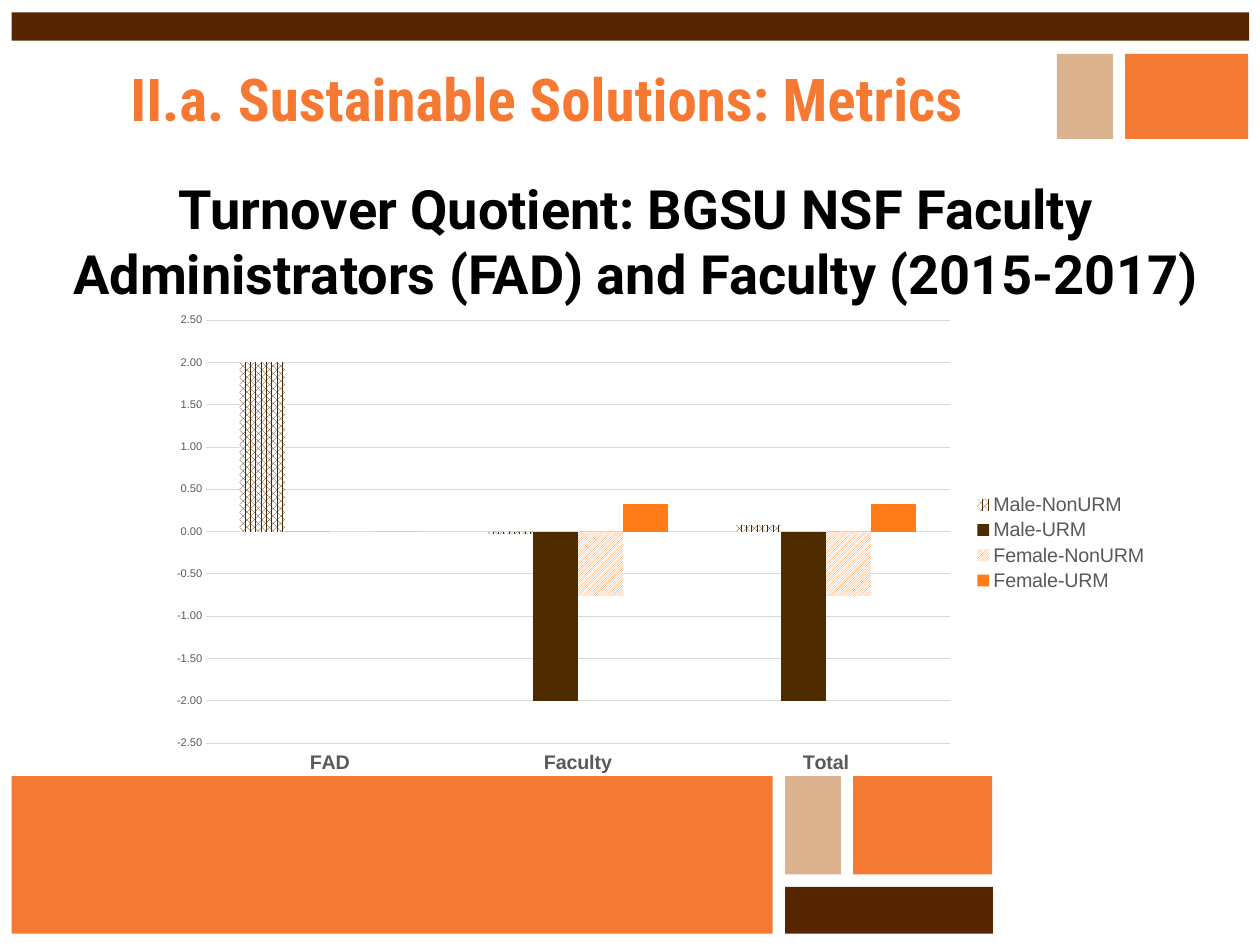
from dataclasses import dataclass

from lxml import etree
from pptx import Presentation
from pptx.chart.data import CategoryChartData
from pptx.dml.color import RGBColor
from pptx.enum.chart import XL_CHART_TYPE, XL_LEGEND_POSITION, XL_TICK_LABEL_POSITION, XL_TICK_MARK
from pptx.enum.dml import MSO_PATTERN
from pptx.enum.shapes import MSO_SHAPE
from pptx.enum.text import MSO_ANCHOR, PP_ALIGN
from pptx.util import Pt

RECTANGLE = MSO_SHAPE.RECTANGLE
COLUMNS = XL_CHART_TYPE.COLUMN_CLUSTERED
LEGEND_RIGHT = XL_LEGEND_POSITION.RIGHT
LABELS_LOW = XL_TICK_LABEL_POSITION.LOW
NO_TICKS = XL_TICK_MARK.NONE
DOTTED = MSO_PATTERN.PERCENT_60
HATCHED = MSO_PATTERN.LIGHT_UPWARD_DIAGONAL
TOP, MIDDLE = MSO_ANCHOR.TOP, MSO_ANCHOR.MIDDLE
CENTER = PP_ALIGN.CENTER


@dataclass(frozen=True)
class Theme:
    brown: str = "572600"
    tan: str = "DBB38E"
    orange: str = "F47932"
    title: str = "F57932"
    black: str = "000000"
    white: str = "FFFFFF"
    label: str = "595959"
    grid: str = "D9D9D9"
    male: str = "4F2C00"
    female: str = "FF7C19"
    title_font: str = "Roboto Condensed"
    heading_font: str = "Roboto"
    chart_font: str = "Arial"
    title_size: int = 48
    heading_size: int = 44
    label_size: int = 16
    chart_size: int = 10
    value_size: int = 9


THEME = Theme()

# Left, top, width, height in points, then colour
BLOCKS = [
    (638, 720.7, 169, 38, THEME.brown),
    (638, 630.7, 45.4, 80, THEME.tan),
    (693.4, 630.7, 113, 80, THEME.orange),
    (9.4, 10, 1005.8, 23, THEME.brown),
    (914.4, 43.9, 100, 69, THEME.orange),
    (859, 43.9, 45.4, 69, THEME.tan),
    (9.4, 630.7, 618.5, 128, THEME.orange),
]

CATEGORIES = ["FAD", "Faculty", "Total"]
# Name, values, colour, pattern
SERIES = [
    ("Male-NonURM", (2, -0.03, 0.08), THEME.male, DOTTED),
    ("Male-URM", (0, -2, -2), THEME.male, None),
    ("Female-NonURM", (0, -0.76, -0.76), THEME.female, HATCHED),
    ("Female-URM", (0, 0.33, 0.33), THEME.female, None),
]
# Plot area as fractions of the chart frame
PLOT_LAYOUT = {"x": 0.048, "y": 0.034, "w": 0.744, "h": 0.886}


def rgb(value):
    return RGBColor.from_string(value)


def apply_format(target, values):
    for name, value in values.items():
        setattr(target, name, value)


def set_font(font, name, size, color, bold=False):
    apply_format(font, {"name": name, "size": Pt(size), "bold": bold})
    font.color.rgb = rgb(color)


def set_line(line, color):
    line.width = Pt(0.75)
    line.color.rgb = rgb(color)


def add_block(page, left, top, width, height, color):
    block = page.shapes.add_shape(RECTANGLE, Pt(left), Pt(top), Pt(width), Pt(height))
    block.shadow.inherit = False
    block.fill.solid()
    block.fill.fore_color.rgb = rgb(color)
    block.line.fill.background()


def add_heading(page, place, text, anchor, *font):
    box = page.shapes.add_textbox(*map(Pt, place))
    frame = box.text_frame
    apply_format(frame, {"word_wrap": True, "vertical_anchor": anchor})
    apply_format(frame, {f"margin_{side}": Pt(4.5) for side in ("left", "top", "right", "bottom")})
    para = frame.paragraphs[0]
    para.alignment = CENTER
    span = para.add_run()
    span.text = text
    set_font(span.font, *font, bold=True)


def fill_series(series, color, pattern):
    series.invert_if_negative = False
    fill = series.format.fill
    if pattern is None:
        fill.solid()
    else:
        fill.patterned()
        fill.pattern = pattern
        fill.back_color.rgb = rgb(THEME.white)
    fill.fore_color.rgb = rgb(color)


def place_plot(chart):
    plot_area = chart.plots[0]._element.getparent()
    uri = etree.QName(plot_area).namespace
    for old in plot_area.findall(f"{{{uri}}}layout"):
        plot_area.remove(old)
    layout = etree.Element(f"{{{uri}}}layout")
    manual = etree.SubElement(layout, f"{{{uri}}}manualLayout")
    settings = {"layoutTarget": "inner", "xMode": "edge", "yMode": "edge", **PLOT_LAYOUT}
    for name, value in settings.items():
        etree.SubElement(manual, f"{{{uri}}}{name}", val=str(value))
    plot_area.insert(0, layout)


def format_axes(chart):
    categories, values = chart.category_axis, chart.value_axis
    for axis in (categories, values):
        apply_format(axis, {"major_tick_mark": NO_TICKS, "minor_tick_mark": NO_TICKS})
    categories.tick_label_position = LABELS_LOW
    set_font(categories.tick_labels.font, THEME.chart_font, THEME.label_size, THEME.label, True)
    set_line(categories.format.line, THEME.grid)

    apply_format(values, {"minimum_scale": -2.5, "maximum_scale": 2.5, "major_unit": 0.5})
    apply_format(values.tick_labels, {"number_format": "0.00", "number_format_is_linked": False})
    set_font(values.tick_labels.font, THEME.chart_font, THEME.value_size, THEME.label)
    values.format.line.fill.background()
    set_line(values.major_gridlines.format.line, THEME.grid)


def add_turnover_chart(page, place):
    data = CategoryChartData(number_format="0.00")
    data.categories = CATEGORIES
    for name, values, _, _ in SERIES:
        data.add_series(name, values)
    chart = page.shapes.add_chart(COLUMNS, *map(Pt, place), data).chart
    apply_format(chart, {"has_title": False, "has_legend": True})
    set_font(chart.font, THEME.chart_font, THEME.chart_size, THEME.black)
    apply_format(chart.legend, {"position": LEGEND_RIGHT, "include_in_layout": False})
    set_font(chart.legend.font, THEME.chart_font, THEME.label_size, THEME.label)
    plot = chart.plots[0]
    apply_format(plot, {"gap_width": 150, "overlap": 0, "vary_by_categories": False})
    for series, (_, _, color, pattern) in zip(plot.series, SERIES):
        fill_series(series, color, pattern)
    format_axes(chart)
    place_plot(chart)


def main():
    deck = Presentation()
    apply_format(deck, {"slide_width": Pt(1024), "slide_height": Pt(768)})
    page = deck.slides.add_slide(deck.slide_layouts[6])

    # Frame of coloured blocks
    for block in BLOCKS:
        add_block(page, *block)

    # Chart heading and chart
    add_heading(page, (41, 138.2, 952, 473),
                "Turnover Quotient: BGSU NSF Faculty Administrators (FAD) and Faculty (2015-2017)",
                TOP, THEME.heading_font, THEME.heading_size, THEME.black)
    add_turnover_chart(page, (128.2, 247, 813, 388))

    # Slide title
    add_heading(page, (0, 20.9, 888.5, 118), "II.a. Sustainable Solutions: Metrics",
                MIDDLE, THEME.title_font, THEME.title_size, THEME.title)

    deck.save("out.pptx")


if __name__ == "__main__":
    main()
